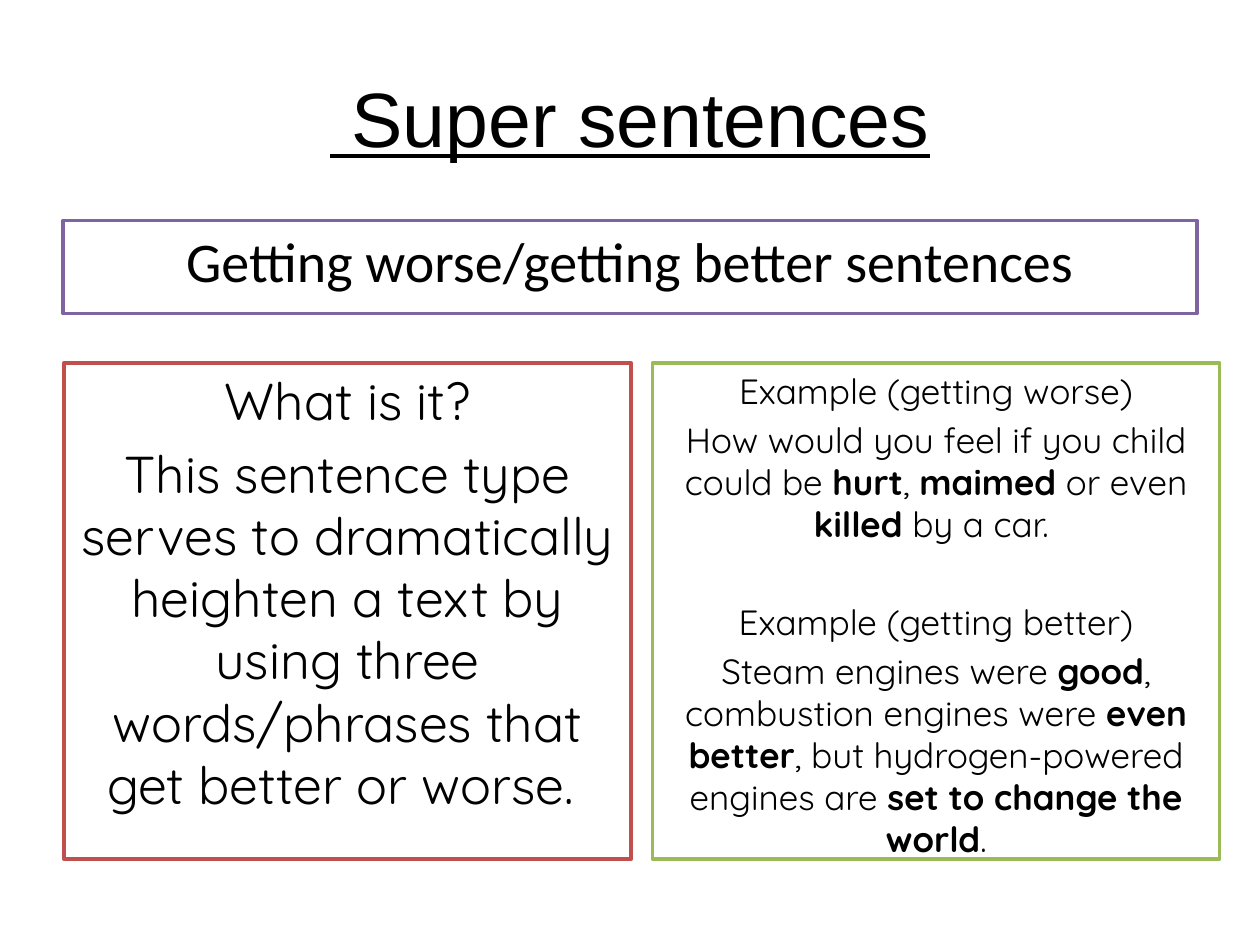
import pptx
import pptx.dml.color
import pptx.enum.shapes
import pptx.enum.text
import pptx.util

RGBColor = pptx.dml.color.RGBColor
Pt = pptx.util.Pt
Inches = pptx.util.Inches
ANCHOR = pptx.enum.text.MSO_ANCHOR

BLACK = RGBColor(0x00, 0x00, 0x00)
WHITE = RGBColor(0xFF, 0xFF, 0xFF)
PURPLE = RGBColor(0x80, 0x64, 0xA2)
RED = RGBColor(0xC0, 0x50, 0x4D)
GREEN = RGBColor(0x9B, 0xBB, 0x59)

deck = pptx.Presentation()
deck.slide_width, deck.slide_height = Inches(10), Inches(7.5)
slide = deck.slides.add_slide(deck.slide_layouts[6])


def write(frame, paragraphs, **font):
    """Each paragraph is (space before in points, text); *stars* mark bold."""
    frame.word_wrap = True
    for index, (gap, text) in enumerate(paragraphs):
        paragraph = frame.paragraphs[0] if index == 0 else frame.add_paragraph()
        paragraph.alignment = pptx.enum.text.PP_ALIGN.CENTER
        paragraph.space_before = Pt(gap)
        for part, words in enumerate(text.split("*")):
            if words:
                run = paragraph.add_run()
                run.text = words
                run.font.color.rgb = BLACK
                run.font.bold = part % 2 == 1
                for attribute, value in font.items():
                    setattr(run.font, attribute, value)


MARGIN = 0.5
FULL_WIDTH = 10 - 2 * MARGIN
PANEL_TOP, PANEL_WIDTH, PANEL_HEIGHT = 2.88, FULL_WIDTH / 2, 3.94

heading = slide.shapes.add_textbox(
    Inches(MARGIN), Inches(0.3), Inches(FULL_WIDTH), Inches(1.25))
heading.text_frame.vertical_anchor = ANCHOR.MIDDLE
write(heading.text_frame, [(0, " Super sentences")],
      name="Arial", size=Pt(44), underline=True)

definition = [
    (6, "What is it?"),
    (6, "This sentence type serves to dramatically heighten a text by using "
        "three words/phrases that get better or worse. "),
]
examples = [
    (4, "Example (getting worse)"),
    (4, "How would you feel if you child could be *hurt*, *maimed* or even "
        "*killed* by a car. "),
    (32, "Example (getting better)"),
    (4, "Steam engines were *good*, combustion engines were *even better*, but "
        "hydrogen-powered engines are *set to change the world*."),
]
panels = [
    ((MARGIN, 1.75, FULL_WIDTH, 0.74), PURPLE, "Calibri", 32,
     [(6.4, "Getting worse/getting better sentences")]),
    ((0.51, PANEL_TOP, PANEL_WIDTH, PANEL_HEIGHT), RED, "Quicksand", 29.6,
     definition),
    ((5.18, PANEL_TOP, PANEL_WIDTH, PANEL_HEIGHT), GREEN, "Quicksand", 20,
     examples),
]
for box, border, typeface, size, paragraphs in panels:
    panel = slide.shapes.add_shape(
        pptx.enum.shapes.MSO_SHAPE.RECTANGLE, *map(Inches, box))
    panel.shadow.inherit = False
    panel.fill.solid()
    panel.fill.fore_color.rgb = WHITE
    panel.line.color.rgb = border
    panel.line.width = Pt(2)
    panel.text_frame.vertical_anchor = ANCHOR.TOP
    write(panel.text_frame, paragraphs, name=typeface, size=Pt(size))

deck.save("out.pptx")
